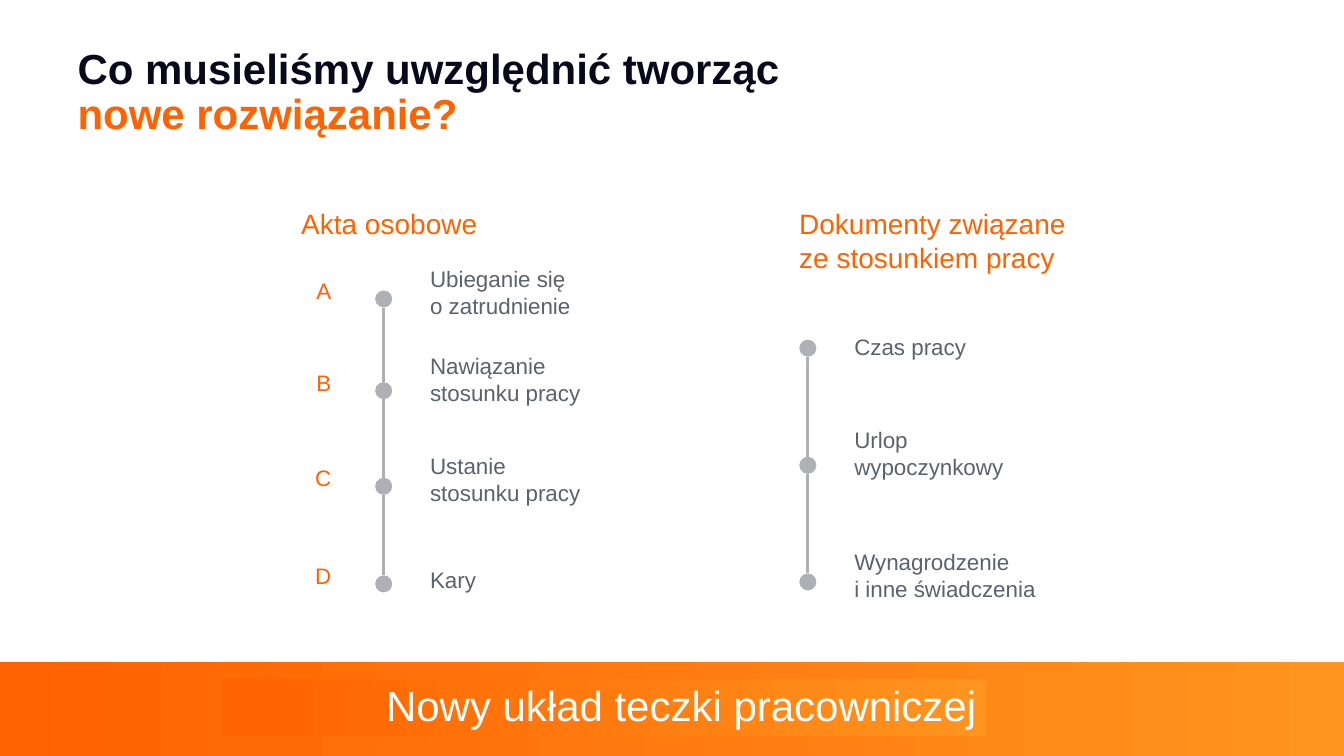
from itertools import pairwise

from lxml.etree import SubElement
from pptx import Presentation
from pptx.dml.color import RGBColor
from pptx.enum.shapes import MSO_CONNECTOR, MSO_SHAPE
from pptx.enum.text import MSO_ANCHOR, MSO_AUTO_SIZE, PP_ALIGN
from pptx.oxml.ns import qn
from pptx.util import Cm, Pt

COLOURS = {
    "orange": "FF6200",
    "amber": "FF941E",
    "navy": "0A091B",
    "slate": "59636D",
    "grey": "AFB0B5",
    "white": "FFFFFF",
}
DOT = 0.43  # timeline dot diameter, cm


class SlideBuilder:
    """Holds the style and the current slide; lengths are in centimetres."""

    font = "Arial"

    def __init__(self, slide):
        self.slide = slide

    def colour(self, name):
        return RGBColor.from_string(COLOURS[name])

    def format_run(self, run, size, colour, bold=False):
        run.font.name = self.font
        run.font.size = Pt(size)
        run.font.bold = bold
        run.font.color.rgb = self.colour(colour)

    def fill_text(self, frame, text, size, colour, align=PP_ALIGN.LEFT):
        frame.word_wrap = True
        frame.auto_size = MSO_AUTO_SIZE.SHAPE_TO_FIT_TEXT
        frame.text = text
        for paragraph in frame.paragraphs:
            paragraph.alignment = align
            for run in paragraph.runs:
                self.format_run(run, size, colour)

    def title(self, parts, left, top, width, height):
        heading = self.slide.shapes.title
        heading.left, heading.top = Cm(left), Cm(top)
        heading.width, heading.height = Cm(width), Cm(height)
        frame = heading.text_frame
        frame.word_wrap = True
        frame.auto_size = MSO_AUTO_SIZE.SHAPE_TO_FIT_TEXT
        frame.vertical_anchor = MSO_ANCHOR.MIDDLE
        paragraph = frame.paragraphs[0]
        paragraph.alignment = PP_ALIGN.LEFT
        paragraph.line_spacing = 0.9
        for text, colour in parts:
            run = paragraph.add_run()
            run.text = text
            self.format_run(run, 30, colour, bold=True)

    def text(self, text, left, top, width, height, size, colour,
             align=PP_ALIGN.LEFT):
        box = self.slide.shapes.add_textbox(
            Cm(left), Cm(top), Cm(width), Cm(height))
        self.fill_text(box.text_frame, text, size, colour, align)

    def dot(self, centre, top):
        circle = self.slide.shapes.add_shape(
            MSO_SHAPE.OVAL, Cm(centre - DOT / 2), Cm(top), Cm(DOT), Cm(DOT))
        circle.shadow.inherit = False
        circle.fill.solid()
        circle.fill.fore_color.rgb = self.colour("grey")
        circle.line.fill.background()

    def link(self, centre, top, bottom):
        line = self.slide.shapes.add_connector(
            MSO_CONNECTOR.STRAIGHT, Cm(centre), Cm(top), Cm(centre), Cm(bottom))
        line.line.color.rgb = self.colour("grey")
        line.line.width = Pt(2)
        SubElement(line._element.spPr, qn("a:effectLst"))

    def band(self, left, top, width, height):
        band = self.slide.shapes.add_shape(
            MSO_SHAPE.RECTANGLE, Cm(left), Cm(top), Cm(width), Cm(height))
        band.shadow.inherit = False
        band.line.fill.background()
        band.fill.gradient()
        band.fill.gradient_angle = 0
        for stop, colour in zip(band.fill.gradient_stops, ("orange", "amber")):
            stop.color.rgb = self.colour(colour)
        return band

    def timeline(self, centre, steps):
        """Each step is (letter, label, dot top, label top)."""
        for upper, lower in pairwise(step[2] for step in steps):
            self.link(centre, upper + DOT, lower)
        for letter, label, dot_top, label_top in steps:
            self.dot(centre, dot_top)
            height = 1.63 if "\v" in label else 0.94
            self.text(label, centre + 0.92, label_top, 7.19, height, 16, "slate")
            if letter:
                self.text(letter, centre - 5.31, dot_top - 0.46, 4.24, 0.94,
                          16, "orange", PP_ALIGN.RIGHT)


def main():
    prs = Presentation()
    prs.slide_width, prs.slide_height = Cm(33.87), Cm(19.05)
    page = SlideBuilder(prs.slides.add_slide(prs.slide_layouts[5]))

    # Title
    page.title([("Co musieliśmy uwzględnić tworząc ", "navy"),
                ("nowe rozwiązanie?", "orange")], 1.7, 1.07, 18.42, 2.57)

    # Personnel files
    page.text("Akta osobowe", 7.34, 5.08, 6.99, 1.12, 20, "orange")
    page.timeline(9.67, [
        ("A", "Ubieganie się\vo zatrudnienie", 7.32, 6.55),
        ("B", "Nawiązanie\vstosunku pracy", 9.63, 8.74),
        ("C", "Ustanie\vstosunku pracy", 12.04, 11.28),
        ("D", "Kary", 14.5, 14.15),
    ])

    # Employment documents
    page.text("Dokumenty związane\nze stosunkiem pracy",
              19.89, 5.08, 9.73, 1.96, 20, "orange")
    page.timeline(20.36, [
        (None, "Czas pracy", 8.56, 8.28),
        (None, "Urlop\vwypoczynkowy", 11.51, 10.62),
        (None, "Wynagrodzenie\vi inne świadczenia", 14.45, 13.69),
    ])

    # Bottom banner
    page.band(0, 16.69, 33.87, 2.36)
    caption = page.band(5.61, 17.12, 19.25, 1.42).text_frame
    page.fill_text(caption, "Nowy układ teczki pracowniczej", 30, "white",
                   PP_ALIGN.RIGHT)
    caption.vertical_anchor = MSO_ANCHOR.MIDDLE
    caption.paragraphs[0].line_spacing = 0.9

    prs.save("out.pptx")


if __name__ == "__main__":
    main()
